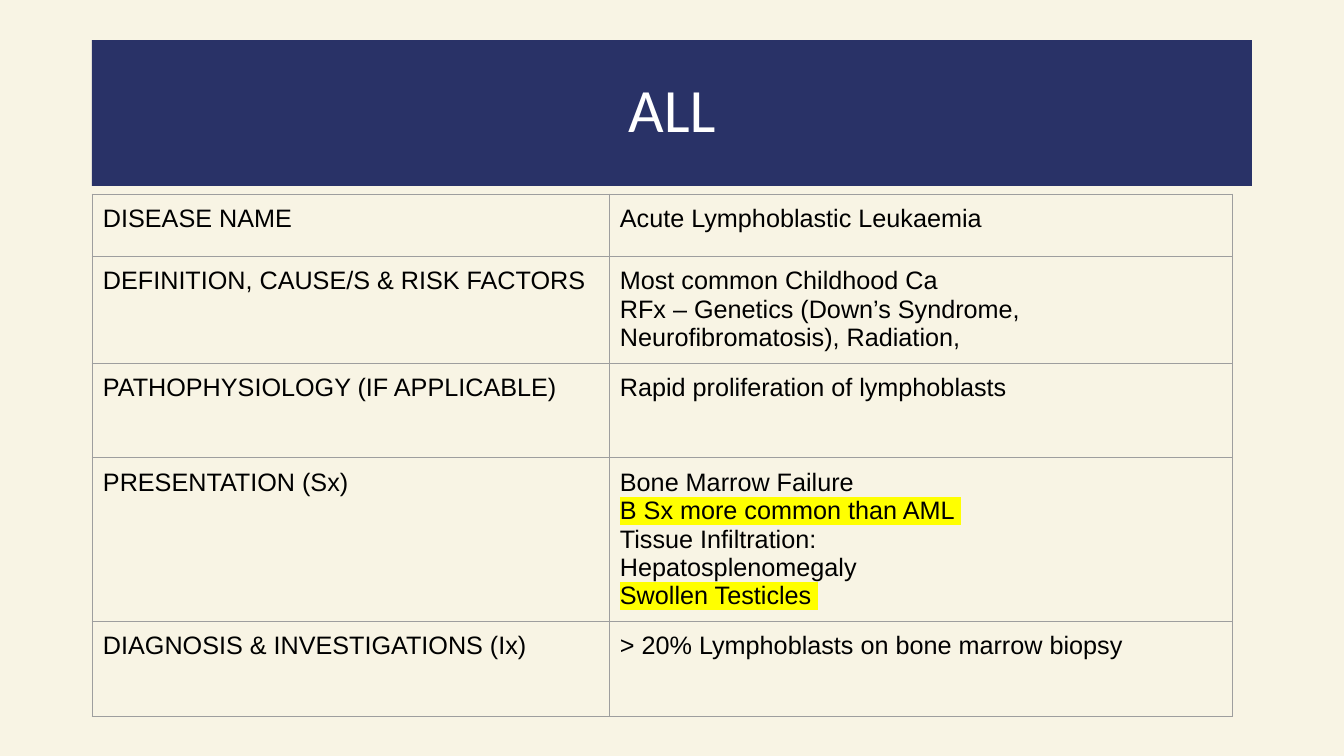
from dataclasses import dataclass

from lxml.etree import SubElement
from pptx import Presentation
from pptx.dml.color import RGBColor
from pptx.enum.text import MSO_ANCHOR, PP_ALIGN
from pptx.oxml.ns import qn
from pptx.util import Pt

PX = 12192000 / 1344


@dataclass(frozen=True)
class Theme:
    background: str = "F8F4E4"
    banner: str = "293267"
    title_text: str = "FFFFFF"
    text: str = "000000"
    border: str = "9E9E9E"
    highlight: str = "FFFF00"
    title_font: str = "Calibri"
    body_font: str = "Arial"
    title_size: int = 44
    body_size: int = 18
    border_width: float = 0.75


THEME = Theme()
COLUMN_WIDTHS = (517, 624)
CELL_MARGIN = 11

# Row height, label, and paragraphs of the finding
ROWS = [
    (62, "DISEASE NAME", ["Acute Lymphoblastic Leukaemia"]),
    (107, "DEFINITION, CAUSE/S & RISK FACTORS", [
        "Most common Childhood Ca",
        "RFx – Genetics (Down’s Syndrome, Neurofibromatosis), Radiation,",
    ]),
    (95, "PATHOPHYSIOLOGY (IF APPLICABLE)", ["Rapid proliferation of lymphoblasts"]),
    (163, "PRESENTATION (Sx)", [
        "Bone Marrow Failure",
        "B Sx more common than AML ",
        "Tissue Infiltration:",
        "Hepatosplenomegaly",
        "Swollen Testicles ",
    ]),
    (95, "DIAGNOSIS & INVESTIGATIONS (Ix)", ["> 20% Lymphoblasts on bone marrow biopsy"]),
]
HIGHLIGHTED = {"B Sx more common than AML ", "Swollen Testicles "}


def px(n):
    return round(n * PX)


def rgb(color):
    return RGBColor.from_string(color)


def style_run(r, font, size, color):
    r.font.name = font
    r.font.size = Pt(size)
    r.font.color.rgb = rgb(color)


def highlight_run(r):
    """Mark the run; the schema wants the highlight just before the font name."""
    rPr = r.font._element
    highlight = SubElement(rPr, qn("a:highlight"))
    SubElement(highlight, qn("a:srgbClr"), val=THEME.highlight)
    rPr.find(qn("a:latin")).addprevious(highlight)


def border_cell(cell):
    """Draw all four borders, which must come before the cell's fill."""
    tcPr = cell._tc.get_or_add_tcPr()
    for i, side in enumerate(("lnL", "lnR", "lnT", "lnB")):
        ln = SubElement(tcPr, qn(f"a:{side}"), w=str(Pt(THEME.border_width)))
        fill = SubElement(ln, qn("a:solidFill"))
        SubElement(fill, qn("a:srgbClr"), val=THEME.border)
        tcPr.insert(i, ln)


def fill_cell(cell, lines):
    cell.margin_left = cell.margin_right = px(CELL_MARGIN)
    cell.margin_top = cell.margin_bottom = px(CELL_MARGIN)
    cell.fill.background()
    border_cell(cell)
    tf = cell.text_frame
    tf.text = "\n".join(lines)
    for p in tf.paragraphs:
        for r in p.runs:
            style_run(r, THEME.body_font, THEME.body_size, THEME.text)
            if r.text in HIGHLIGHTED:
                highlight_run(r)


def add_banner(s, text, x, y, w, h):
    sp = s.shapes.title
    sp.left, sp.top, sp.width, sp.height = px(x), px(y), px(w), px(h)
    sp.fill.solid()
    sp.fill.fore_color.rgb = rgb(THEME.banner)
    tf = sp.text_frame
    tf.text = text
    tf.vertical_anchor = MSO_ANCHOR.MIDDLE
    p = tf.paragraphs[0]
    p.alignment = PP_ALIGN.CENTER
    p.line_spacing = 0.9
    style_run(p.runs[0], THEME.title_font, THEME.title_size, THEME.title_text)


def add_disease_table(s, x, y):
    heights = [row[0] for row in ROWS]
    table = s.shapes.add_table(
        len(ROWS), len(COLUMN_WIDTHS),
        px(x), px(y), px(sum(COLUMN_WIDTHS)), px(sum(heights)),
    ).table
    table.first_row = table.horz_banding = False
    for column, width in zip(table.columns, COLUMN_WIDTHS):
        column.width = px(width)
    for row, (height, label, findings) in zip(table.rows, ROWS):
        row.height = px(height)
        fill_cell(row.cells[0], [label])
        fill_cell(row.cells[1], findings)


def add_disease_slide(prs):
    s = prs.slides.add_slide(prs.slide_layouts[5])
    s.background.fill.solid()
    s.background.fill.fore_color.rgb = rgb(THEME.background)
    add_banner(s, "ALL", 92, 40, 1160, 146)
    add_disease_table(s, 92, 194)


def main():
    prs = Presentation()
    prs.slide_width, prs.slide_height = px(1344), px(756)
    add_disease_slide(prs)
    prs.save("out.pptx")


if __name__ == "__main__":
    main()
